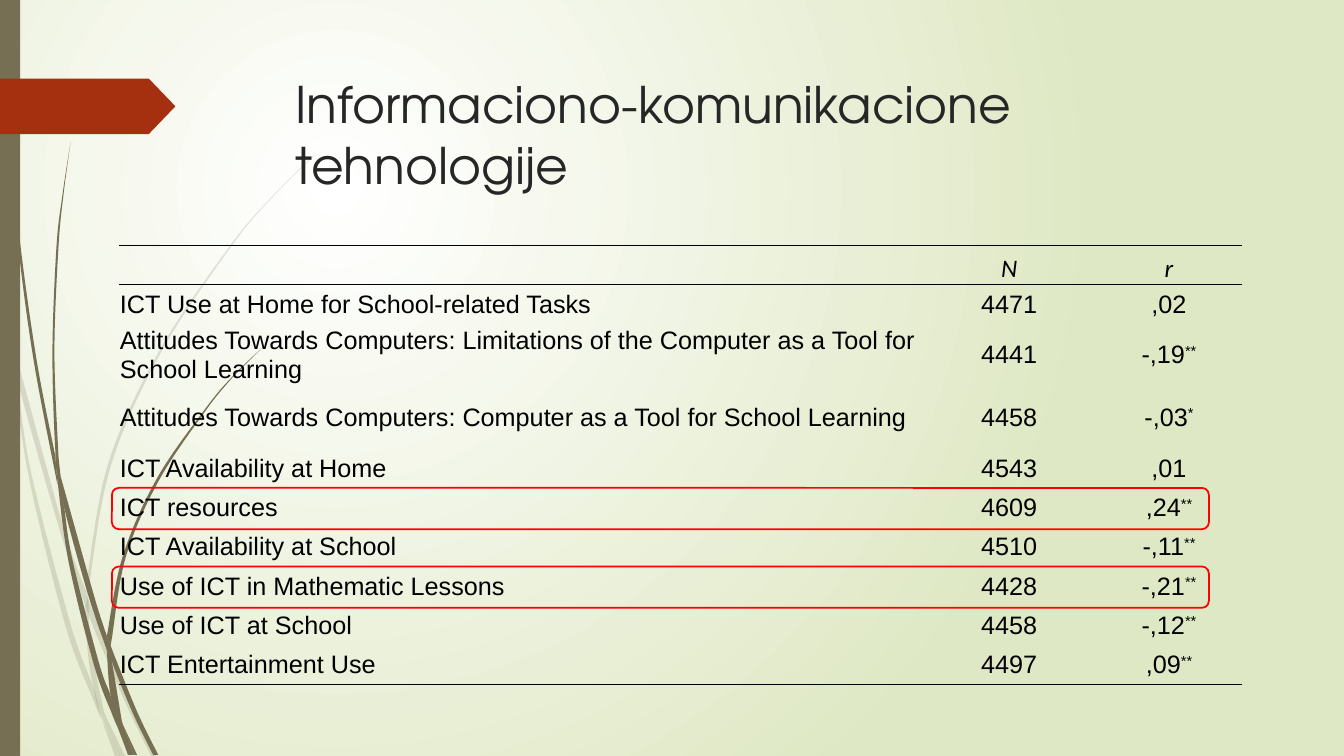
"""Build a slide with a table of ICT correlations on a wisp background."""
from itertools import accumulate

from lxml.etree import SubElement
from pptx import Presentation
from pptx.dml.color import RGBColor
from pptx.enum.shapes import MSO_SHAPE as Shape
from pptx.enum.text import MSO_ANCHOR as Anchor, PP_ALIGN as Align
from pptx.oxml.ns import qn
from pptx.util import Inches, Pt

TITLE = "Informaciono-komunikacione tehnologije"
HEADER = ("", "N", "r")
SCALES = [
    ("ICT Use at Home for School-related Tasks", "4471", ",02", ""),
    ("Attitudes Towards Computers: Limitations of the Computer as a Tool for School Learning",
     "4441", "-,19", "**"),
    ("Attitudes Towards Computers: Computer as a Tool for School Learning",
     "4458", "-,03", "*"),
    ("ICT Availability at Home", "4543", ",01", ""),
    ("ICT resources", "4609", ",24", "**"),
    ("ICT Availability at School", "4510", "-,11", "**"),
    ("Use of ICT in Mathematic Lessons", "4428", "-,21", "**"),
    ("Use of ICT at School", "4458", "-,12", "**"),
    ("ICT Entertainment Use", "4497", ",09", "**"),
]
HIGHLIGHTED = ("ICT resources", "Use of ICT in Mathematic Lessons")
TALL_ROWS = (2, 3)

PALE_WISPS = [
    ([(.11, 3.5), (.09, 3.22), (0, 2.82)], [(0, 2.99), (.1, 3.44)]),
    ([(.14, 3.45), (.17, 3.76), (.58, 5.22), (.84, 5.99)], [(.85, 5.86), (.62, 5.2), (.14, 3.45)]),
    ([(.88, 5.96), (.88, 6.1), (1.23, 6.94), (1.5, 7.5)], [(1.55, 7.5), (1.27, 6.92), (.92, 6.07)]),
    ([(1.19, 7.5), (1.24, 7.5)], [(1.05, 7.11)]),
    ([(.11, 3.5), (.28, 4.7), (.65, 6.21), (.92, 6.93), (1.01, 7.14)],
     [(.99, 7.07), (.93, 6.83), (.7, 6.19), (.31, 4.69), (.17, 3.76)]),
    ([(.84, 5.99), (.87, 6.46), (.93, 6.83), (1.05, 7.11)],
     [(1.03, 7.06), (.91, 6.46), (.88, 6.1), (.88, 6.08)]),
    ([(3.12, 1.53), (2.68, 1.97), (2.28, 2.44), (1.58, 3.48), (1.07, 4.61), (.85, 5.84)],
     [(.88, 5.96), (.88, 5.84), (1.1, 4.62), (1.6, 3.49), (2.29, 2.45), (2.68, 1.98), (3.12, 1.54)]),
    ([(1.01, 7.14), (1.14, 7.5)], [(1.19, 7.5)]),
    ([(.88, 6.08), (.88, 5.96)], [(.85, 5.86), (.84, 5.99)]),
    ([(.93, 6.83), (.99, 7.07), (1.19, 7.5)], [(1.05, 7.11), (.96, 6.92)]),
]
DARK_WISPS = [
    ([(.03, 0), (.04, .48), (.07, 1.1), (.17, 2.33), (.33, 3.55), (.57, 4.81)],
     [(.55, 4.53), (.36, 3.55), (.19, 2.32), (.08, 1.09), (.04, 0)]),
    ([(.6, 4.72), (.64, 5.05), (.88, 5.92), (1.06, 6.45)], [(1.06, 6.31), (.93, 5.9), (.6, 4.72)]),
    ([(1.1, 6.41), (1.11, 6.56), (1.32, 7.08), (1.52, 7.49)],
     [(1.57, 7.49), (1.36, 7.06), (1.13, 6.49)]),
    ([(.57, 4.77), (.68, 5.57), (.93, 6.59), (1.11, 7.08), (1.17, 7.22)],
     [(1.16, 7.17), (1.1, 6.91), (.98, 6.57), (.72, 5.56), (.64, 5.05)]),
    ([(.7, 1.41), (.62, 1.93), (.56, 2.45), (.52, 3.49), (.55, 4.49), (.6, 4.72)],
     [(.58, 4.53), (.54, 3.49), (.58, 2.45), (.63, 1.93), (.7, 1.41)]),
    ([(1.22, 7.19), (1.33, 7.49)], [(1.36, 7.49)]),
    ([(.55, 4.49), (.57, 4.77), (.64, 5.05)], [(.6, 4.72)]),
    ([(2.61, 3.44), (2.31, 3.73), (2.04, 4.05), (1.56, 4.74), (1.22, 5.51), (1.06, 6.31)],
     [(1.1, 6.41), (1.11, 6.33), (1.25, 5.52), (1.58, 4.76), (2.05, 4.06), (2.31, 3.74)]),
    ([(1.17, 7.22), (1.27, 7.49)], [(1.31, 7.49)]),
    ([(1.06, 6.45), (1.1, 6.91), (1.22, 7.19)], [(1.21, 7.16), (1.11, 6.56), (1.09, 6.51)]),
    ([(1.06, 6.31), (1.06, 6.45)], [(1.11, 6.56), (1.1, 6.41)]),
    ([(1.1, 6.91), (1.17, 7.22), (1.3, 7.49)], [(1.33, 7.49), (1.22, 7.19), (1.16, 7.06)]),
]

WHITE = RGBColor(0xFF, 0xFF, 0xFF)
LIME = RGBColor(0xDF, 0xE8, 0xC4)
OLIVE = RGBColor(0x76, 0x6F, 0x54)
RUST = RGBColor(0xA5, 0x30, 0x10)
CHARCOAL = RGBColor(0x26, 0x26, 0x26)
BLACK = RGBColor(0, 0, 0)
RED = RGBColor(0xFF, 0, 0)

SLIDE_W, SLIDE_H = 13.33, 7.5
TABLE_LEFT, TABLE_TOP = 1.18, 2.43
COLUMNS = (7.97, 1.72, 1.45)
ROWS = [.62 if row in TALL_ROWS else .39 for row in range(len(SCALES) + 1)]
ROW_TOPS = list(accumulate(ROWS, initial=TABLE_TOP))
NO_STYLE = "{2D5ABB26-0587-4C30-8999-92F81FD0307C}"


def bezier_points(knots):
    """Return two controls and an end for each span of a smooth curve."""
    padded = [knots[0], *knots, knots[-1]]
    points = []
    for a, b, c, d in zip(padded, padded[1:], padded[2:], padded[3:]):
        points.append(tuple(q + (r - p) / 6 for p, q, r in zip(a, b, c)))
        points.append(tuple(r - (s - q) / 6 for q, r, s in zip(b, c, d)))
        points.append(c)
    return points


def paint(shape, color):
    shape.shadow.inherit = False
    shape.fill.solid()
    shape.fill.fore_color.rgb = color
    shape.line.fill.background()


def add_wisp(shapes, edges, opacity):
    out, back = edges
    points = bezier_points(out) + [out[-1], back[0], back[0]] + bezier_points(back)
    builder = shapes.build_freeform(*(Inches(v) for v in out[0]))
    builder.add_line_segments([(Inches(x), Inches(y)) for x, y in points])
    wisp = builder.convert_to_shape()
    paint(wisp, OLIVE)
    outline = next(wisp._element.iter(qn("a:path")))
    lines = outline.findall(qn("a:lnTo"))[:len(points)]
    for index in range(0, len(lines), 3):
        curve = SubElement(outline, qn("a:cubicBezTo"))
        lines[index].addprevious(curve)
        for line in lines[index:index + 3]:
            curve.append(line[0])
            outline.remove(line)
    if opacity < 100:
        color = wisp._element.spPr.find(qn("a:solidFill"))[0]
        SubElement(color, qn("a:alpha"), val=str(opacity * 1000))


def add_block(shapes, kind, left, top, width, height):
    return shapes.add_shape(kind, *map(Inches, (left, top, width, height)))


def set_background(slide):
    fill = slide.background.fill
    fill.gradient()
    for stop, color, position in zip(fill.gradient_stops, (WHITE, LIME), (0, 1)):
        stop.color.rgb = color
        stop.position = position
    gradient = next(slide._element.iter(qn("a:gradFill")))
    gradient.remove(gradient.find(qn("a:lin")))
    circle = SubElement(gradient, qn("a:path"), {"path": "circle"})
    SubElement(circle, qn("a:fillToRect"), l="50000", t="50000", r="100000", b="100000")


def add_rule(cell, side):
    rule = SubElement(cell._tc.get_or_add_tcPr(), qn(f"a:ln{side}"), w=str(Pt(.5)))
    SubElement(SubElement(rule, qn("a:solidFill")), qn("a:srgbClr"), val=str(BLACK))


def fill_cell(cell, row, column, text, stars=""):
    cell.margin_left = cell.margin_right = cell.margin_top = Inches(.01)
    cell.margin_bottom = 0
    cell.vertical_anchor = Anchor.MIDDLE if row else Anchor.BOTTOM
    for side in {0: "TB", len(SCALES): "B"}.get(row, ""):
        add_rule(cell, side)
    cell.fill.background()
    cell.text_frame.text = text
    paragraph = cell.text_frame.paragraphs[0]
    paragraph.alignment = Align.CENTER if column else Align.LEFT
    if stars:
        marker = paragraph.add_run()
        marker.text = stars
        marker._r.get_or_add_rPr().set("baseline", "30000")
    for run in paragraph.runs:
        run.font.size = Pt(18)
        run.font.name = "Arial" if row else "Calibri"
        run.font.italic = not row
        run.font.color.rgb = BLACK


def add_scales_table(shapes):
    table = shapes.add_table(len(ROWS), len(COLUMNS), Inches(TABLE_LEFT), Inches(TABLE_TOP),
                             Inches(sum(COLUMNS)), Inches(sum(ROWS))).table
    table.first_row = table.horz_banding = False
    table._tbl.tblPr.find(qn("a:tableStyleId")).text = NO_STYLE
    for column, width in zip(table.columns, COLUMNS):
        column.width = Inches(width)
    for row, (*texts, stars) in enumerate([(*HEADER, ""), *SCALES]):
        table.rows[row].height = Inches(ROWS[row])
        for column, text in enumerate(texts):
            fill_cell(table.cell(row, column), row, column, text, stars if column == 2 else "")


def place_title(title):
    title.left, title.top, title.width, title.height = map(Inches, (2.83, .68, 9.75, 1.4))
    frame = title.text_frame
    frame.text = TITLE
    frame.word_wrap = True
    frame.vertical_anchor = Anchor.TOP
    frame.paragraphs[0].alignment = Align.LEFT
    font = frame.paragraphs[0].runs[0].font
    font.size, font.name, font.color.rgb = Pt(36), "TeX Gyre Adventor", CHARCOAL


def main():
    deck = Presentation()
    deck.slide_width, deck.slide_height = Inches(SLIDE_W), Inches(SLIDE_H)
    slide = deck.slides.add_slide(deck.slide_layouts[5])
    shapes = slide.shapes
    set_background(slide)
    for wisps, opacity in ((PALE_WISPS, 20), (DARK_WISPS, 100)):
        for edges in wisps:
            add_wisp(shapes, edges, opacity)
    paint(add_block(shapes, Shape.RECTANGLE, 0, 0, .2, SLIDE_H), OLIVE)
    banner = add_block(shapes, Shape.PENTAGON, 0, .78, 1.74, .55)
    banner.adjustments[0] = .48
    paint(banner, RUST)
    place_title(shapes.title)
    shapes._spTree.append(shapes.title._element)
    add_scales_table(shapes)
    for row, (scale, *_) in enumerate(SCALES, 1):
        if scale in HIGHLIGHTED:
            outline = add_block(shapes, Shape.ROUNDED_RECTANGLE, 1.11, ROW_TOPS[row], 10.88, .41)
            outline.shadow.inherit = False
            outline.fill.background()
            outline.line.color.rgb = RED
            outline.line.width = Pt(1.25)
    deck.save("out.pptx")


if __name__ == "__main__":
    main()
